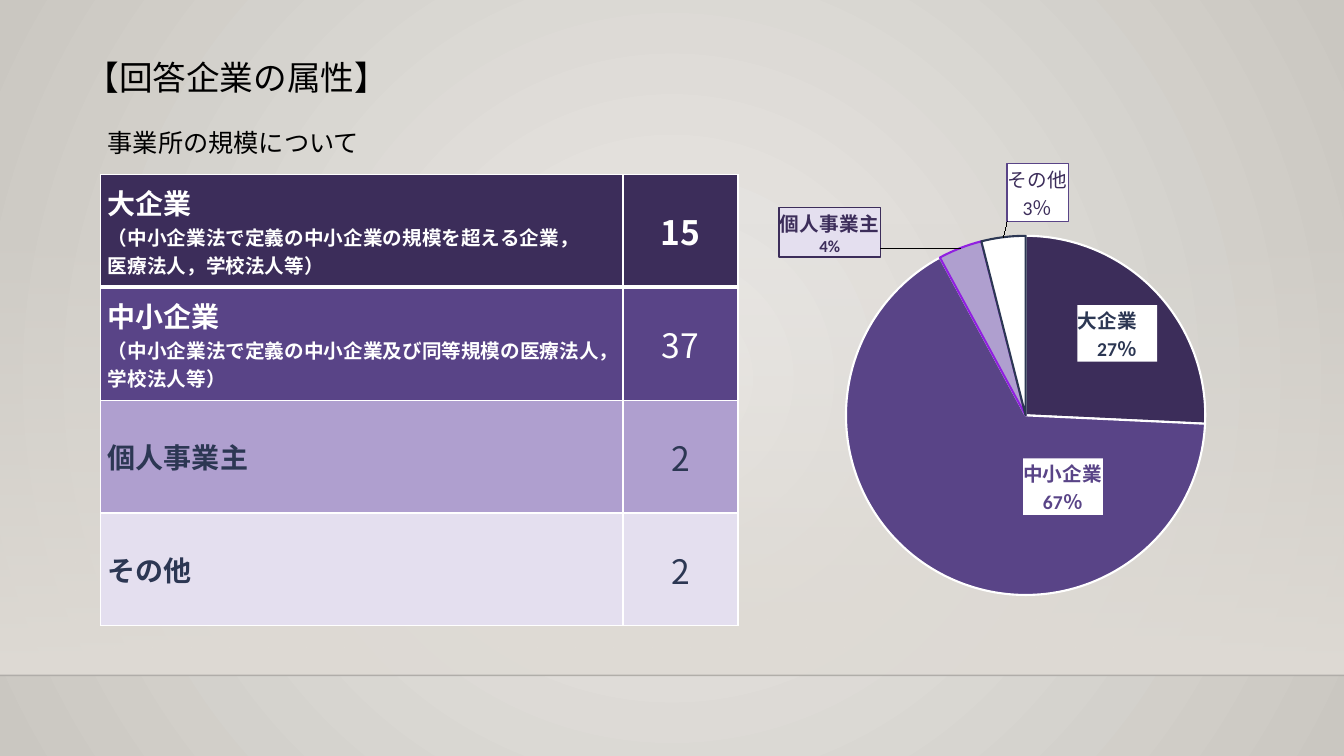
from lxml.etree import SubElement
from pptx import Presentation
from pptx.chart.data import CategoryChartData
from pptx.dml.color import RGBColor
from pptx.enum.chart import XL_CHART_TYPE, XL_LABEL_POSITION
from pptx.enum.shapes import MSO_CONNECTOR, MSO_SHAPE
from pptx.enum.text import MSO_ANCHOR, PP_ALIGN
from pptx.oxml import parse_xml
from pptx.oxml.ns import nsdecls, qn
from pptx.util import Inches, Pt

COLORS = {
    "ink": "000000", "white": "FFFFFF", "navy": "2C3753", "dark": "3C2D5A",
    "mid": "594487", "soft": "AF9FCF", "pale": "E4DFEF", "edge": "9020E0",
    "glow": "ECEAE7", "rim": "CAC7C1", "floor": "DFDBD5", "line": "000001",
}
LATIN, CJK = "Calibri", "Noto Sans CJK JP"
LARGE = "（中小企業法で定義の中小企業の規模を超える企業，"
LARGE_END = "医療法人，学校法人等）"
SMALL = "（中小企業法で定義の中小企業及び同等規模の医療法人，学校法人等）"


def color(name):
    return RGBColor.from_string(COLORS[name])


def add_run(para, text, size, tone, bold=False, face=LATIN):
    run = para.add_run()
    run.text = text
    font = run.font
    font.size, font.bold, font.name = Pt(size), bold, face
    font.color.rgb = color(tone)


def fade(first, last, kind, alpha=100):
    return parse_xml(
        f'<a:gradFill {nsdecls("a")} rotWithShape="1"><a:gsLst>'
        f'<a:gs pos="0"><a:srgbClr val="{COLORS[first]}">'
        f'<a:alpha val="{alpha * 1000}"/></a:srgbClr></a:gs>'
        f'<a:gs pos="100000"><a:srgbClr val="{COLORS[last]}"/></a:gs>'
        f'</a:gsLst>{kind}</a:gradFill>')


def add_back(slide, wide, high):
    slide.background.fill.solid()
    props = slide.element.find(".//" + qn("p:bgPr"))
    props.replace(props[0], fade("glow", "rim", (
        '<a:path path="circle"><a:fillToRect l="50000" t="50000" '
        'r="50000" b="50000"/></a:path>')))
    top, base = 2.21, high - 0.8
    wall = slide.shapes.add_shape(
        MSO_SHAPE.RECTANGLE, 0, Inches(top), Inches(wide), Inches(base - top))
    wall.shadow.inherit = False
    wall.line.fill.background()
    wall.fill.solid()
    props = wall.element.spPr
    props.replace(props.find(qn("a:solidFill")), fade(
        "floor", "floor", '<a:lin ang="5400000" scaled="0"/>', 0))
    rule = slide.shapes.add_connector(
        MSO_CONNECTOR.STRAIGHT, 0, Inches(base), Inches(wide), Inches(base))
    rule.line.width = Pt(1)
    rule.line.color.rgb = color("line")
    props = rule.element.spPr
    tint = props.find(".//" + qn("a:srgbClr"))
    SubElement(tint, qn("a:alpha")).set("val", "20000")
    SubElement(props, qn("a:effectLst"))


def add_head(slide, box, text, size):
    frame = slide.shapes.add_textbox(*map(Inches, box)).text_frame
    frame.word_wrap = True
    add_run(frame.paragraphs[0], text, size, "ink")


def set_cell(cell, fill, base):
    cell.fill.solid()
    cell.fill.fore_color.rgb = color(fill)
    cell.vertical_anchor = MSO_ANCHOR.MIDDLE
    cell.margin_left = cell.margin_right = Inches(0.07)
    cell.margin_top = cell.margin_bottom = 0
    props = cell._tc.get_or_add_tcPr()
    sides = (("lnL", 1), ("lnR", 1), ("lnT", 1), ("lnB", base))
    for spot, (side, width) in enumerate(sides):
        props.insert(spot, parse_xml(
            f'<a:{side} {nsdecls("a")} w="{Pt(width)}"><a:solidFill>'
            f'<a:srgbClr val="{COLORS["white"]}"/></a:solidFill></a:{side}>'))


def add_grid(slide, box):
    rows = [
        ("大企業", [LARGE, LARGE_END], 15, "dark", "white"),
        ("中小企業", [SMALL], 37, "mid", "white"),
        ("個人事業主", [], 2, "soft", "navy"),
        ("その他", [], 2, "pale", "navy"),
    ]
    left, top, wide, high = box
    table = slide.shapes.add_table(
        len(rows), 2, *map(Inches, box)).table
    table.first_row = table.horz_banding = False
    count = 1.14
    table.columns[0].width = Inches(wide - count)
    table.columns[1].width = Inches(count)
    for spot, (name, notes, value, fill, tone) in enumerate(rows):
        table.rows[spot].height = Inches(high / len(rows))
        for col in range(2):
            set_cell(table.cell(spot, col), fill, 1 if spot else 3)
        frame = table.cell(spot, 0).text_frame
        add_run(frame.paragraphs[0], name, 20, tone, True)
        for note in notes:
            add_run(frame.add_paragraph(), note, 14, tone, True)
        para = table.cell(spot, 1).text_frame.paragraphs[0]
        para.alignment = PP_ALIGN.CENTER
        add_run(para, str(value), 24, tone, spot == 0, CJK)


def layout(x, y, size=""):
    return parse_xml(
        f'<c:layout {nsdecls("c")}><c:manualLayout>{size}'
        f'<c:x val="{x}"/><c:y val="{y}"/></c:manualLayout></c:layout>')


def set_label(point, lines, spot, sizes, tone, bold, fill, edge, place):
    label = point.data_label
    frame = label.text_frame
    for row, (text, size) in enumerate(zip(lines, sizes)):
        para = frame.add_paragraph() if row else frame.paragraphs[0]
        add_run(para, text, size, tone, bold)
    label.position = place
    node = frame._txBody.getparent().getparent()
    node.find(qn("c:idx")).addnext(layout(*spot))
    line = (f'<a:ln w="{Pt(1)}"><a:solidFill><a:srgbClr val="{COLORS[edge]}"/>'
            '</a:solidFill></a:ln>') if edge else ""
    node.find(qn("c:tx")).addnext(parse_xml(
        f'<c:spPr {nsdecls("c", "a")}><a:solidFill>'
        f'<a:srgbClr val="{COLORS[fill]}"/></a:solidFill>{line}</c:spPr>'))


def add_pie(slide, box):
    data = CategoryChartData()
    data.categories = ["大企業　" + LARGE + LARGE_END,
                       "中小企業　" + SMALL, "個人事業主", "その他"]
    data.add_series("Series 1", (26, 67, 4, 4))
    chart = slide.shapes.add_chart(
        XL_CHART_TYPE.PIE, *map(Inches, box), data).chart
    chart.has_legend = chart.has_title = False
    chart.font.name, chart.font.size = LATIN, Pt(10)
    chart.font.color.rgb = color("ink")
    plot = chart.plots[0]
    plot.vary_by_categories = True
    area = plot._element.getparent()
    for old in area.findall(qn("c:layout")):
        area.remove(old)
    area.insert(0, parse_xml(
        f'<c:layout {nsdecls("c")}><c:manualLayout>'
        '<c:layoutTarget val="inner"/><c:xMode val="edge"/>'
        '<c:yMode val="edge"/><c:x val="0.025"/><c:y val="0.18"/>'
        '<c:w val="0.939"/><c:h val="0.755"/></c:manualLayout></c:layout>'))
    series = plot.series[0]
    labels = series.data_labels
    labels.show_percentage = labels.show_category_name = True
    labels.show_value = False
    labels.font.size = Pt(12)
    inner, outer = XL_LABEL_POSITION.INSIDE_END, XL_LABEL_POSITION.OUTSIDE_END
    slices = [
        ("dark", "white", (["大企業　", "27％"], (0.01, 0.02), (14, 14),
                           "navy", True, "white", None, inner)),
        ("mid", "white", (["中小企業", "67％"], (0.15, -0.1), (14, 14),
                          "mid", True, "white", None, inner)),
        ("soft", "edge", (["個人事業主", "4%"], (-0.13, 0.03), (14, 12),
                          "dark", True, "pale", "dark", outer)),
        ("white", "navy", (["その他", "3％"], (0.11, -0.02), (14, 14),
                           "dark", False, "white", "mid", outer)),
    ]
    for spot, (fill, edge, label) in enumerate(slices):
        point = series.points[spot]
        point.format.fill.solid()
        point.format.fill.fore_color.rgb = color(fill)
        point.format.line.color.rgb = color(edge)
        point.format.line.width = Pt(1.5)
        set_label(point, *label)


def main():
    deck = Presentation()
    wide, high = 13.33, 7.5
    deck.slide_width, deck.slide_height = Inches(wide), Inches(high)
    slide = deck.slides.add_slide(deck.slide_layouts[6])
    add_back(slide, wide, high)
    add_head(slide, (0.75, 0.52, 11.83, 0.5), "【回答企業の属性】", 24)
    add_grid(slide, (1, 1.73, 6.32, 4.48))
    add_head(slide, (0.97, 1.21, 5.01, 0.4), "事業所の規模について", 18)
    add_pie(slide, (7.24, 1.49, 5.93, 4.72))
    deck.save("out.pptx")


if __name__ == "__main__":
    main()
